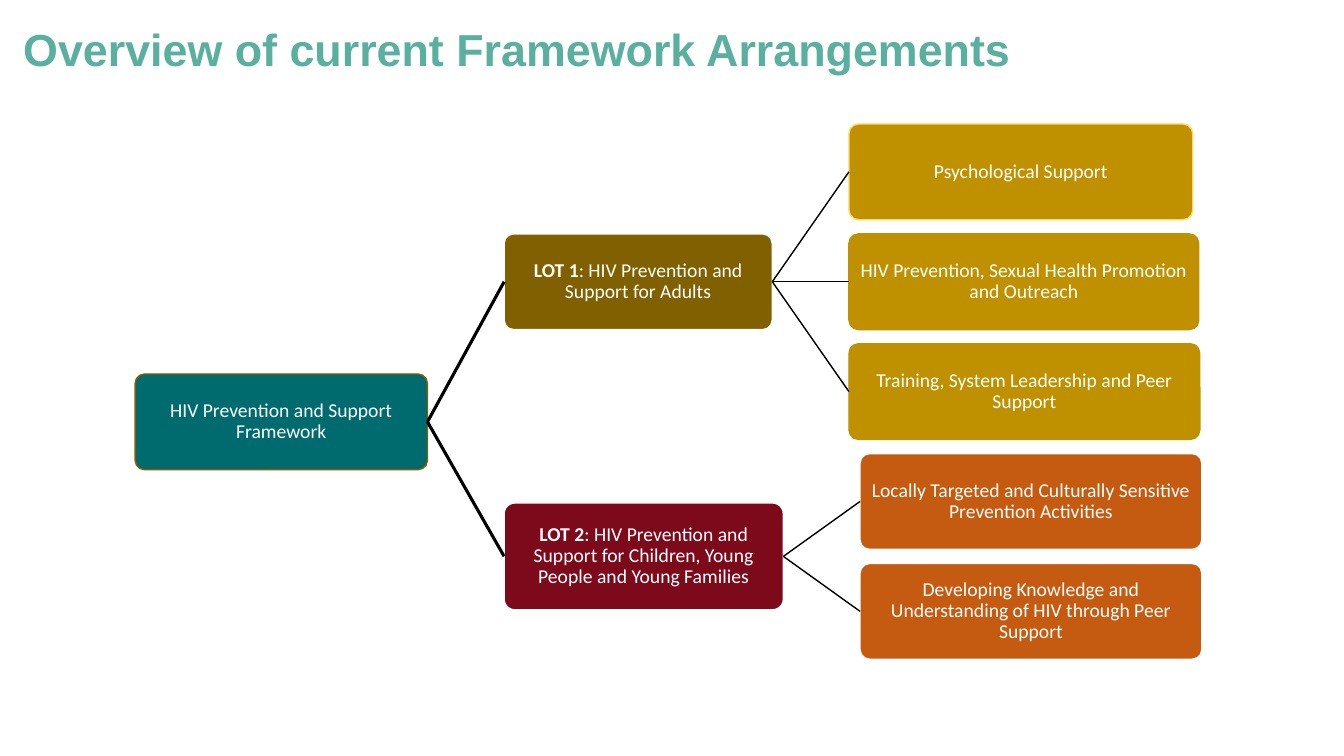
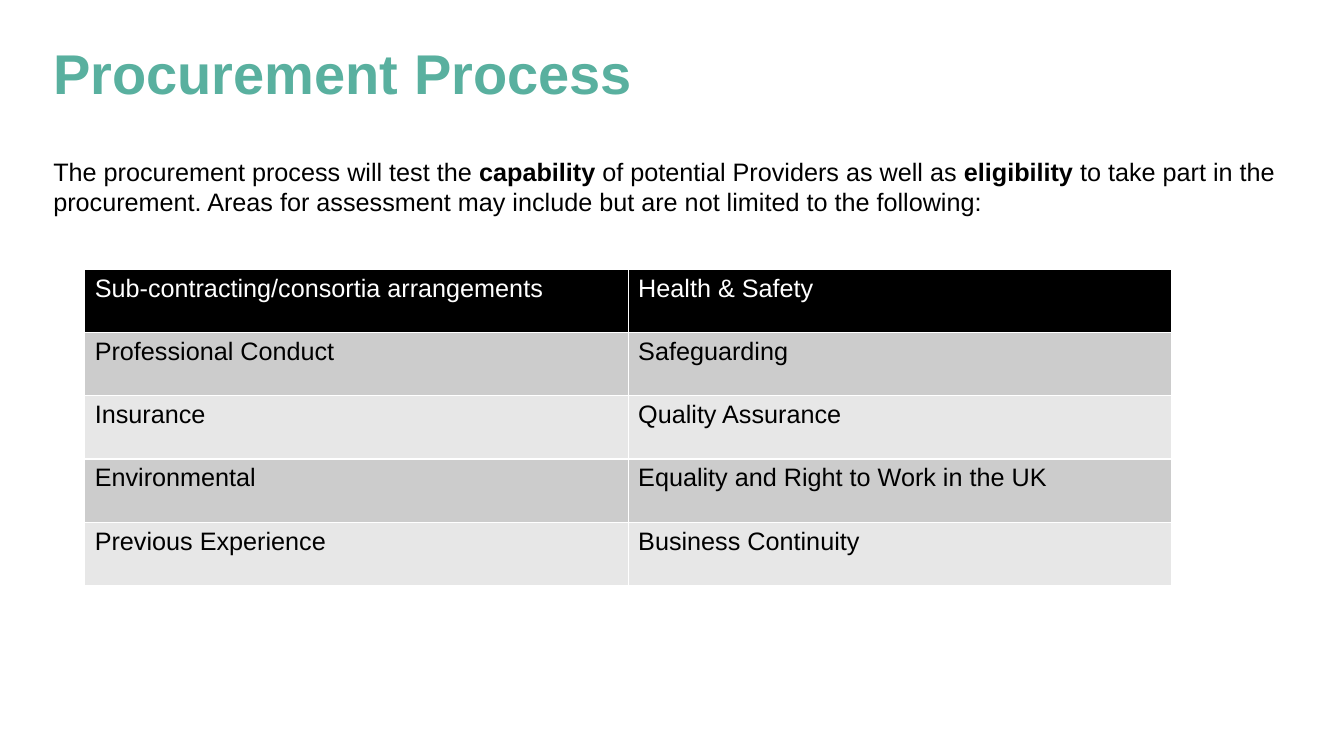
from lxml.etree import SubElement
from pptx import Presentation
from pptx.dml.color import RGBColor
from pptx.enum.shapes import MSO_CONNECTOR, MSO_SHAPE
from pptx.enum.text import MSO_ANCHOR, MSO_AUTO_SIZE, PP_ALIGN
from pptx.oxml.ns import qn
from pptx.util import Inches, Pt

MINT = RGBColor(0x59, 0xB0, 0x9F)
TEAL = RGBColor(0x00, 0x6B, 0x6F)
BROWN = RGBColor(0x80, 0x60, 0x00)
GOLD = RGBColor(0xBF, 0x90, 0x00)
SAND = RGBColor(0xFF, 0xD9, 0x66)
WINE = RGBColor(0x7D, 0x0A, 0x1B)
RUST = RGBColor(0xC5, 0x5A, 0x11)
BLACK = RGBColor(0, 0, 0)
WHITE = RGBColor(255, 255, 255)
DARK = RGBColor(0xCC, 0xCC, 0xCC)
LIGHT = RGBColor(0xE7, 0xE7, 0xE7)

NODE = {"name": "Calibri", "size": Pt(14)}
BODY = {"name": "Arial", "size": Pt(18)}


def write(frame, text, look, color, align=PP_ALIGN.LEFT, space=1.0):
    """Fill the first paragraph; parts between asterisks are bold."""
    para = frame.paragraphs[0]
    para.alignment = align
    para.line_spacing = space
    for i, part in enumerate(text.split("*")):
        if part:
            run = para.add_run()
            run.text = part
            run.font.bold = i % 2 == 1
            run.font.color.rgb = color
            for key, value in look.items():
                setattr(run.font, key, value)


def add_page(text, left, top, width, size):
    """Add a slide with a title in the shared style."""
    page = deck.slides.add_slide(deck.slide_layouts[5])
    title = page.shapes.title
    place = {"left": left, "top": top, "width": width, "height": 0.81}
    for key, value in place.items():
        setattr(title, key, Inches(value))
    frame = title.text_frame
    frame.auto_size = MSO_AUTO_SIZE.NONE
    frame.vertical_anchor = MSO_ANCHOR.BOTTOM
    look = {"name": "Arial", "size": Pt(size), "bold": True}
    write(frame, text, look, MINT, space=0.9)
    return page


deck = Presentation()
deck.slide_width = Inches(13.33)
deck.slide_height = Inches(7.5)

# Framework tree
page = add_page("Overview of current Framework Arrangements", 0.13, 0, 11.18, 32)
rows = [1.23 + 1.09 * i for i in range(5)]

# Key: text, parent, left, top, width, height, fill, outline
nodes = {
    "root": ("HIV Prevention and Support Framework", None,
             1.34, 3.71, 2.9, 0.95, TEAL, BROWN),
    "lot1": ("*LOT 1*: HIV Prevention and Support for Adults", "root",
             5, rows[1], 2.66, 0.95, BROWN, WHITE),
    "lot2": ("*LOT 2*: HIV Prevention and Support for Children, Young People "
             "and Young Families", "root",
             5, 4.99, 2.77, 1.06, WINE, WHITE),
    "mind": ("Psychological Support", "lot1",
             8.42, rows[0], 3.41, 0.95, GOLD, SAND),
    "reach": ("HIV Prevention, Sexual Health Promotion and Outreach", "lot1",
              8.42, rows[1], 3.47, 0.95, GOLD, GOLD),
    "train": ("Training, System Leadership and Peer Support", "lot1",
              8.42, rows[2], 3.48, 0.95, GOLD, GOLD),
    "local": ("Locally Targeted and Culturally Sensitive Prevention Activities",
              "lot2", 8.53, rows[3], 3.39, 0.95, RUST, WHITE),
    "peer": ("Developing Knowledge and Understanding of HIV through Peer Support",
             "lot2", 8.53, rows[4], 3.39, 0.95, RUST, WHITE),
}

boxes = {}
for key, (text, parent, left, top, width, height, fill, edge) in nodes.items():
    box = page.shapes.add_shape(MSO_SHAPE.ROUNDED_RECTANGLE, Inches(left),
                                Inches(top), Inches(width), Inches(height))
    box.adjustments[0] = 0.1
    box.shadow.inherit = False
    box.fill.solid()
    box.fill.fore_color.rgb = fill
    box.line.color.rgb = edge
    box.line.width = Pt(1)
    frame = box.text_frame
    frame.word_wrap = True
    frame.vertical_anchor = MSO_ANCHOR.MIDDLE
    for side in ("left", "right", "top", "bottom"):
        setattr(frame, "margin_" + side, Inches(0.04))
    write(frame, text, NODE, WHITE, PP_ALIGN.CENTER, 0.9)
    boxes[key] = box

    # Link from the parent's right side to this box's left side
    if parent:
        link = page.shapes.add_connector(MSO_CONNECTOR.STRAIGHT, 0, 0, 0, 0)
        link.begin_connect(boxes[parent], 3)
        link.end_connect(box, 1)
        link.line.color.rgb = BLACK
        link.line.width = Pt(2.25 if parent == "root" else 1)
        SubElement(link.element.spPr, qn("a:effectLst"))

# Procurement process
page = add_page("Procurement Process", 0.43, 0.3, 10, 40)
intro = page.shapes.add_textbox(Inches(0.43), Inches(1.5), Inches(12.45), Inches(0.75))
intro.text_frame.word_wrap = True
write(intro.text_frame,
      "The procurement process will test the *capability* of potential Providers "
      "as well as *eligibility* to take part in the procurement. Areas for "
      "assessment may include but are not limited to the following:", BODY, BLACK)

# Assessment areas
areas = [
    ("Sub-contracting/consortia arrangements", "Health & Safety"),
    ("Professional Conduct", "Safeguarding"),
    ("Insurance", "Quality Assurance"),
    ("Environmental", "Equality and Right to Work in the UK"),
    ("Previous Experience", "Business Continuity"),
]
table = page.shapes.add_table(len(areas), 2, Inches(0.84), Inches(2.67),
                              Inches(10.78), Inches(3.14)).table
for r, texts in enumerate(areas):
    fill = BLACK if r == 0 else DARK if r % 2 else LIGHT
    for c, text in enumerate(texts):
        cell = table.cell(r, c)
        props = cell._tc.get_or_add_tcPr()
        for side in ("lnL", "lnR", "lnT", "lnB"):
            line = SubElement(props, qn("a:" + side), w=str(Pt(1)))
            paint = SubElement(line, qn("a:solidFill"))
            SubElement(paint, qn("a:srgbClr"), val=str(WHITE))
        cell.fill.solid()
        cell.fill.fore_color.rgb = fill
        write(cell.text_frame, text, BODY, BLACK if r else WHITE)

deck.save("out.pptx")
